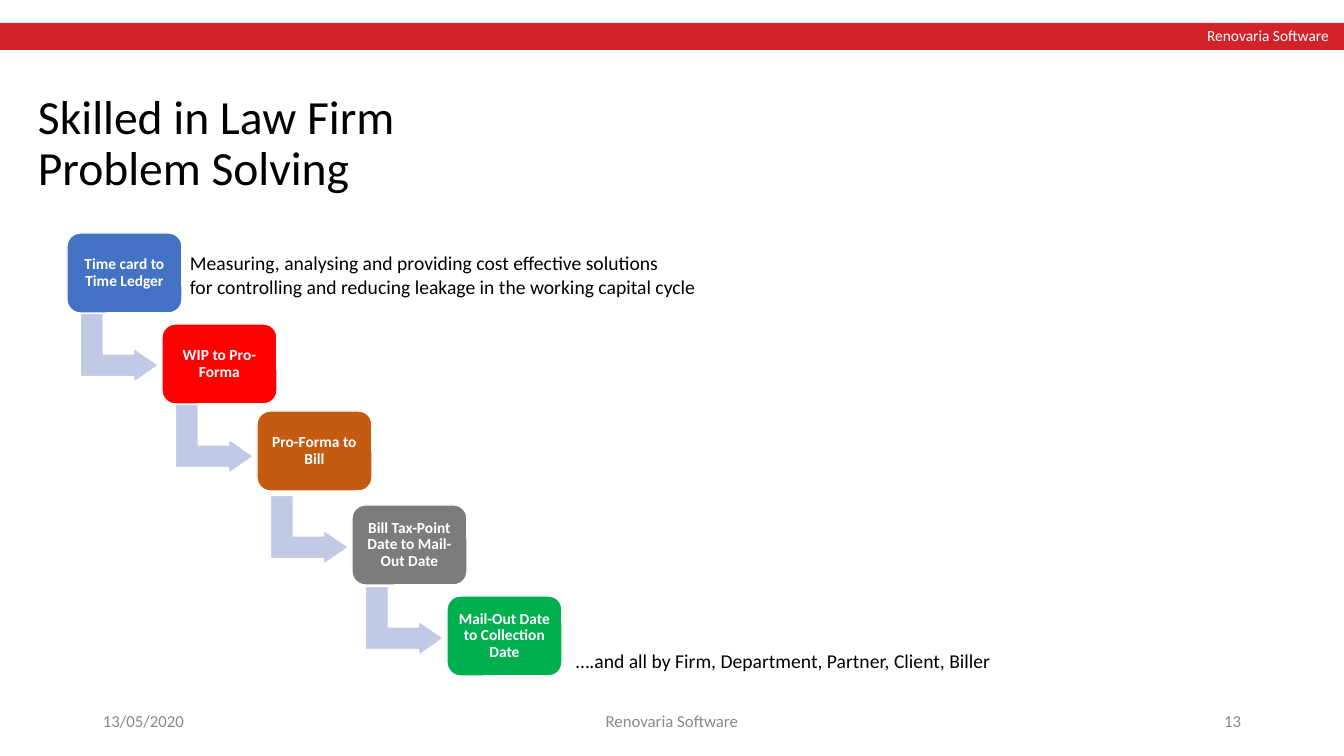
from pptx import Presentation
from pptx.dml.color import RGBColor as Rgb
from pptx.enum.shapes import MSO_SHAPE as Kind
from pptx.enum.text import MSO_ANCHOR as Anchor, PP_ALIGN as Align
from pptx.util import Pt

SCALE = 914400 / 100.8  # EMU in one px
FONT = "Calibri"
FIRM = "Renovaria Software"
HEX = {
    "bar": "D2232A", "arrow": "C1C9E4", "white": "FFFFFF",
    "black": "000000", "grey": "898989",
    "blue": "4472C4", "red": "FF0000", "rust": "C55A11",
    "slate": "7C7C7C", "green": "00B050",
}

# Label, colour and top of each step
STEPS = [
    ("Time card to Time Ledger", "blue", 233),
    ("WIP to Pro-Forma", "red", 324),
    ("Pro-Forma to Bill", "rust", 411),
    ("Bill Tax-Point Date to Mail-Out Date", "slate", 505),
    ("Mail-Out Date to Collection Date", "green", 596),
]
STEP_X, STEP_W, STEP_H = 67, 115, 80
PITCH_X, PITCH_Y = 95, 91


def px(n):
    return round(n * SCALE)


def color(name):
    return Rgb.from_string(HEX[name])


def write(shape, text, size, tint, align=Align.LEFT, anchor=Anchor.TOP,
          bold=False, space=1.0):
    frame = shape.text_frame
    frame.word_wrap = True
    frame.vertical_anchor = anchor
    frame.text = text
    for para in frame.paragraphs:
        para.alignment = align
        para.line_spacing = space
        for run in para.runs:
            font = run.font
            font.name, font.size, font.bold = FONT, Pt(size), bold
            font.color.rgb = color(tint)
    return frame


def add_text(slide, box, text, size, tint, **style):
    shape = slide.shapes.add_textbox(*map(px, box))
    write(shape, text, size, tint, **style)


def add_form(slide, kind, box, fill, edge=None):
    shape = slide.shapes.add_shape(kind, *map(px, box))
    shape.shadow.inherit = False
    shape.fill.solid()
    shape.fill.fore_color.rgb = color(fill)
    if edge:
        shape.line.color.rgb = color(edge)
        shape.line.width = Pt(1)
    else:
        shape.line.fill.background()
    return shape


def add_arrow(slide, i):
    box = (85 + i * PITCH_X, 309 + i * PITCH_Y, 69, 78)
    arrow = add_form(slide, Kind.BENT_UP_ARROW, box, "arrow", "white")
    arrow.rotation = 90
    for k, size in enumerate((0.33, 0.25, 0.36)):
        arrow.adjustments[k] = size


def add_step(slide, i, label, fill, top):
    box = (STEP_X + i * PITCH_X, top, STEP_W, STEP_H)
    step = add_form(slide, Kind.ROUNDED_RECTANGLE, box, fill, "white")
    frame = write(step, label, 11, "white", align=Align.CENTER,
                  anchor=Anchor.MIDDLE, bold=True, space=0.9)
    frame.margin_left = frame.margin_right = px(5)
    frame.margin_top = frame.margin_bottom = px(5)


def main():
    deck = Presentation()
    deck.slide_width, deck.slide_height = px(1344), px(756)
    slide = deck.slides.add_slide(deck.slide_layouts[6])

    # Header bar
    bar = add_form(slide, Kind.RECTANGLE, (0, 23, 1344, 27), "bar")
    frame = write(bar, FIRM, 11, "white", align=Align.RIGHT,
                  anchor=Anchor.MIDDLE, space=0.9)
    frame.margin_right = px(15)
    frame.margin_top = frame.margin_bottom = 0

    # Footer
    for left, wide, text, align in (
        (93, 302, "13/05/2020", Align.LEFT),
        (445, 454, FIRM, Align.CENTER),
        (949, 302, "13", Align.RIGHT),
    ):
        add_text(slide, (left, 701, wide, 40), text, 12, "grey",
                 align=align, anchor=Anchor.MIDDLE)

    # Title
    add_text(slide, (28, 72, 550, 129), "Skilled in Law Firm\vProblem Solving",
             34, "black", anchor=Anchor.BOTTOM, space=0.9)

    # Staircase of steps, with an arrow to each next one
    for i, (label, fill, top) in enumerate(STEPS):
        if i < len(STEPS) - 1:
            add_arrow(slide, i)
        add_step(slide, i, label, fill, top)

    # Remarks
    add_text(slide, (180, 246, 540, 89),
             "Measuring, analysing and providing cost effective solutions\v"
             "for controlling and reducing leakage in the working capital cycle",
             14, "black")
    add_text(slide, (566, 644, 527, 64),
             "….and all by Firm, Department, Partner, Client, Biller",
             14, "black")

    deck.save("out.pptx")


if __name__ == "__main__":
    main()
